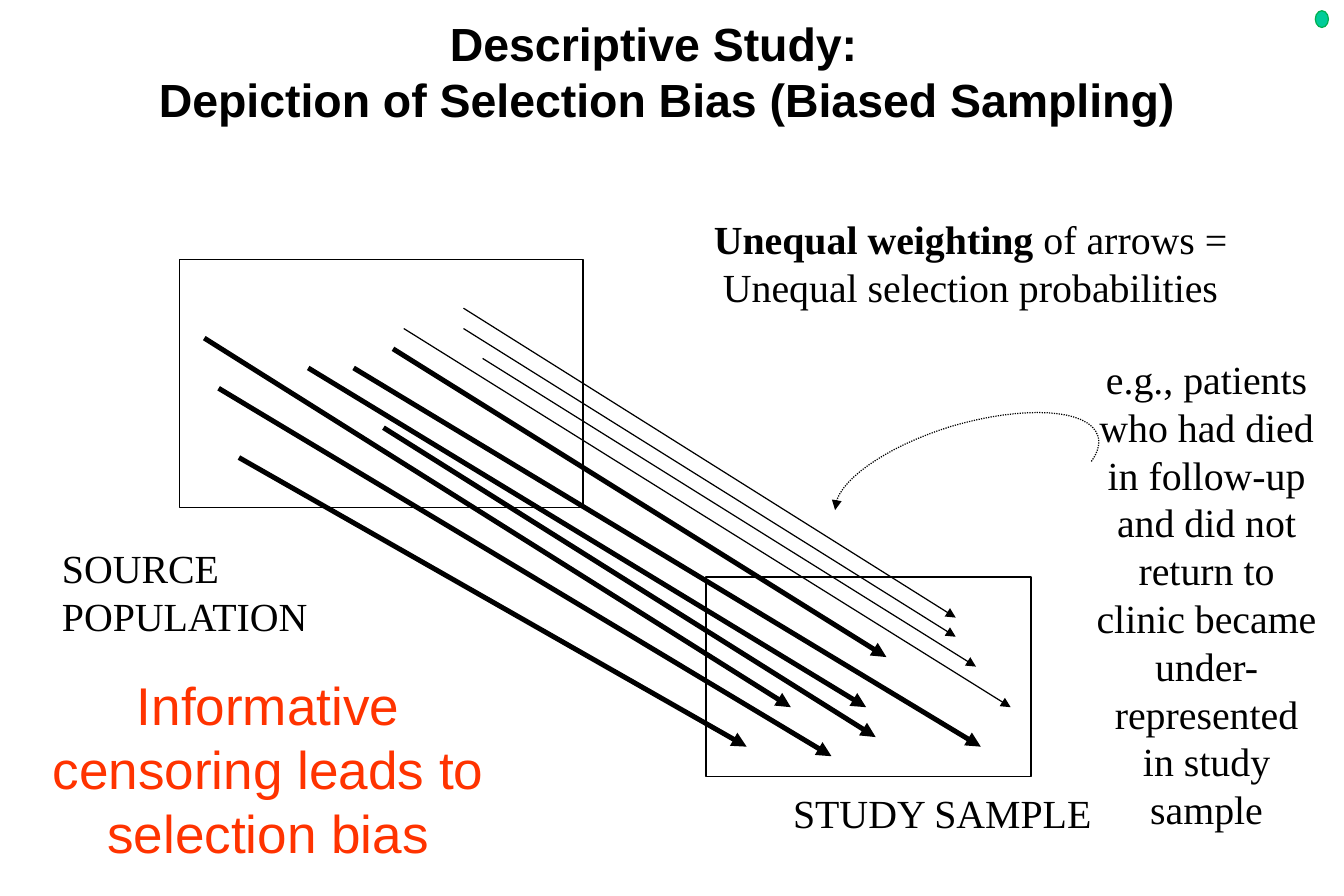
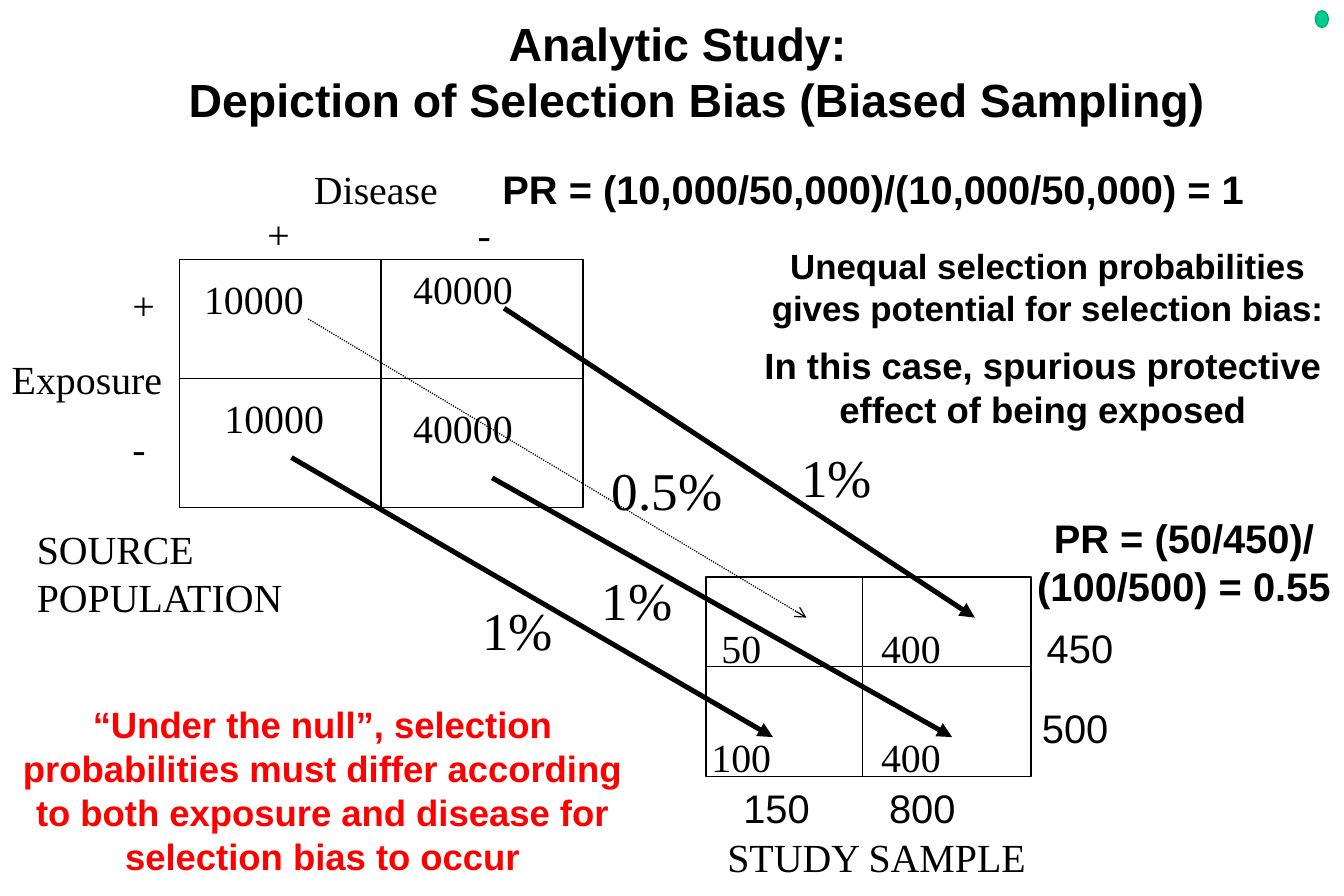
from dataclasses import dataclass

from lxml import etree
from pptx import Presentation
from pptx.dml.color import RGBColor
from pptx.enum.dml import MSO_LINE
from pptx.enum.shapes import MSO_CONNECTOR, MSO_SHAPE
from pptx.enum.text import MSO_ANCHOR, PP_ALIGN
from pptx.oxml.ns import qn
from pptx.util import Inches, Pt

BLACK = RGBColor(0x00, 0x00, 0x00)
ORANGE = RGBColor(0xFF, 0x33, 0x00)
RED = RGBColor(0xFF, 0x00, 0x00)
MINT = RGBColor(0x00, 0xCC, 0x99)
GREEN = RGBColor(0x00, 0xB0, 0x50)

SANS, SERIF = "Arial", "Times New Roman"
LEFT, CENTER = PP_ALIGN.LEFT, PP_ALIGN.CENTER
TOP = MSO_ANCHOR.TOP
DOTTED = MSO_LINE.ROUND_DOT
STRAIGHT = MSO_CONNECTOR.STRAIGHT
RECTANGLE, OVAL = MSO_SHAPE.RECTANGLE, MSO_SHAPE.OVAL

TITLE_ONLY = 5
LINE_PITCH = 1.2
THIN, THICK = 0.75, 3
CURVE_STEPS = 16

Point = tuple[float, float]


@dataclass(frozen=True)
class Label:
    text: str
    left: float
    top: float
    width: float
    height: float = 0.5
    size: float = 24
    font: str = SERIF
    color: RGBColor = BLACK
    bold: bool = False
    align: PP_ALIGN = CENTER
    bold_lead: str = ""


@dataclass(frozen=True)
class Arrow:
    start: Point
    end: Point
    weight: float = THICK
    dotted: bool = False
    head: str = "triangle"


@dataclass(frozen=True)
class Frame:
    left: float
    top: float
    width: float
    height: float


SOURCE = Frame(1.5, 2.17, 3.38, 2.08)
SAMPLE = Frame(5.91, 4.83, 2.72, 1.67)

SAMPLING_ARROWS = [
    Arrow((3.29, 2.92), (7.42, 5.5)),
    Arrow((2, 3.83), (6.25, 6.25)),
    Arrow((1.83, 3.25), (6.96, 6.33)),
    Arrow((2.58, 3.08), (7.25, 5.92)),
    Arrow((1.71, 2.83), (6.62, 5.92)),
    Arrow((3.21, 3.58), (7.33, 6.17)),
    Arrow((2.96, 3.08), (8.21, 6.25)),
    Arrow((3.38, 2.75), (8.46, 5.92), THIN),
    Arrow((4.04, 3), (8.17, 5.58), THIN),
    Arrow((3.88, 2.75), (8, 5.33), THIN),
    Arrow((3.88, 2.58), (8, 5.17), THIN),
]

DESCRIPTIVE_LABELS = [
    Label("SOURCE POPULATION", 0.42, 4.5, 2.5, 0.9, align=LEFT),
    Label("STUDY SAMPLE", 6.54, 6.55, 3, align=LEFT),
    Label("e.g., patients who had died in follow-up and did not return to "
          "clinic became under-represented in study sample",
          9.08, 2.92, 2.04, 4.14),
    Label("Informative censoring leads to selection bias",
          0.12, 5.58, 4.25, 1.72, 32, SANS, ORANGE),
    Label("of arrows = Unequal selection probabilities",
          5.71, 1.75, 4.83, 0.91, bold_lead="Unequal weighting "),
]

# Cubic segments: two control points and an end point each.
CALLOUT_START = (6.99, 4.27)
CALLOUT_CURVES = [
    ((6.98, 4.04), (7.41, 3.74), (7.96, 3.57)),
    ((8.57, 3.39), (9.12, 3.42), (9.19, 3.65)),
    ((9.21, 3.71), (9.19, 3.79), (9.13, 3.87)),
]

SELECTION_ARROWS = [
    Arrow((2.44, 3.83), (6.47, 6.17)),
    Arrow((4.22, 2.58), (8.16, 5.17)),
    Arrow((4.12, 4), (7.97, 6.17)),
    Arrow((2.58, 2.67), (6.75, 5.17), THIN, dotted=True, head="arrow"),
]

CELL_COUNTS = [
    Label(text, left, top, 1.17) for text, left, top in [
        ("10000", 1.54, 2.25), ("40000", 3.29, 2.17),
        ("10000", 1.71, 3.25), ("40000", 3.29, 3.33),
        ("50", 5.62, 5.17), ("400", 7.04, 5.17),
        ("100", 5.62, 6.08), ("400", 7.04, 6.08),
    ]
]
MARGIN_TOTALS = [
    Label(text, left, top, 1, font=SANS) for text, left, top in [
        ("450", 8.54, 5.17), ("500", 8.5, 5.84),
        ("150", 6, 6.51), ("800", 7.22, 6.51),
    ]
]
SELECTION_PROBABILITIES = [
    Label(text, left, top, 1.25, 0.63, 32) for text, left, top in [
        ("1%", 3.71, 4.95), ("1%", 4.71, 4.7),
        ("0.5%", 4.96, 3.78), ("1%", 6.38, 3.67),
    ]
]
AXIS_LABELS = [
    Label(text, left, top, 1.46, align=LEFT) for text, left, top in [
        ("Disease", 2.53, 1.33), ("+", 2.14, 1.71), ("-", 3.9, 1.71),
        ("Exposure", 0, 2.92), ("+", 1.01, 2.3), ("-", 1.01, 3.5),
    ]
]
ANALYTIC_LABELS = [
    *AXIS_LABELS, *CELL_COUNTS, *SELECTION_PROBABILITIES, *MARGIN_TOTALS,
    Label("SOURCE\nPOPULATION", 0.21, 4.34, 2.5, 0.91, align=LEFT),
    Label("STUDY SAMPLE", 5.99, 6.92, 3, align=LEFT),
    Label("PR = (10,000/50,000)/(10,000/50,000) = 1",
          3.79, 1.33, 7.04, font=SANS, bold=True),
    Label("Unequal selection probabilities gives potential for selection bias:",
          6.29, 2, 4.96, 0.94, 21, SANS, bold=True),
    Label("In this case, spurious protective effect of being exposed",
          6.25, 2.82, 4.96, 0.85, 22, SANS, bold=True),
    Label("PR = (50/450)/ (100/500) = 0.55",
          8.57, 4.25, 2.68, 0.91, font=SANS, bold=True),
    Label("“Under the null”, selection probabilities must differ according "
          "to both exposure and disease for selection bias to occur",
          0.03, 5.83, 5.34, 1.6, 22, SANS, RED, True),
]


def format_paragraph(para, size: float, font: str, color: RGBColor,
                     align: PP_ALIGN, bold: bool) -> None:
    para.alignment = align
    para.line_spacing = Pt(round(size * LINE_PITCH, 1))
    para.font.size = Pt(size)
    para.font.name = font
    para.font.bold = bold
    para.font.color.rgb = color


def add_label(page, label: Label) -> None:
    box = page.shapes.add_textbox(Inches(label.left), Inches(label.top),
                                  Inches(label.width), Inches(label.height))
    frame = box.text_frame
    frame.word_wrap = True
    frame.text = label.text
    if label.bold_lead:
        para = frame.paragraphs[0]
        para.clear()
        lead = para.add_run()
        lead.text = label.bold_lead
        lead.font.bold = True
        para.add_run().text = label.text
    for para in frame.paragraphs:
        format_paragraph(para, label.size, label.font, label.color,
                         label.align, label.bold)


def add_outline(page, preset: MSO_SHAPE, frame: Frame, color: RGBColor):
    shape = page.shapes.add_shape(preset, Inches(frame.left), Inches(frame.top),
                                  Inches(frame.width), Inches(frame.height))
    shape.shadow.inherit = False
    shape.fill.background()
    shape.line.color.rgb = color
    shape.line.width = Pt(THIN)
    return shape


def add_line(page, start: Point, end: Point, weight: float = THIN):
    line = page.shapes.add_connector(
        STRAIGHT, *(Inches(value) for value in (*start, *end)))
    line.line.color.rgb = BLACK
    line.line.width = Pt(weight)
    etree.SubElement(line._element.spPr, qn("a:effectLst"))
    return line


def add_arrowhead(shape, end_tag: str, kind: str) -> None:
    etree.SubElement(shape.line._get_or_add_ln(), qn(end_tag), type=kind)


def add_arrow(page, arrow: Arrow) -> None:
    line = add_line(page, arrow.start, arrow.end, arrow.weight)
    if arrow.dotted:
        line.line.dash_style = DOTTED
    add_arrowhead(line, "a:tailEnd", arrow.head)


def add_cross(page, frame: Frame, split_x: float, split_y: float) -> None:
    """Divide a frame into the four cells of a two-by-two table."""
    add_line(page, (split_x, frame.top), (split_x, frame.top + frame.height))
    add_line(page, (frame.left, split_y), (frame.left + frame.width, split_y))


def cubic_point(corners: tuple[Point, ...], t: float) -> Point:
    weights = ((1 - t) ** 3, 3 * t * (1 - t) ** 2, 3 * t * t * (1 - t), t ** 3)
    x, y = (sum(weight * corner[axis] for weight, corner in zip(weights, corners))
            for axis in (0, 1))
    return x, y


def add_callout_curve(page) -> None:
    points, start = [], CALLOUT_START
    for curve in CALLOUT_CURVES:
        points += [cubic_point((start, *curve), step / CURVE_STEPS)
                   for step in range(1, CURVE_STEPS + 1)]
        start = curve[-1]
    builder = page.shapes.build_freeform(*(Inches(value) for value in CALLOUT_START))
    builder.add_line_segments([(Inches(x), Inches(y)) for x, y in points], close=False)
    curve_shape = builder.convert_to_shape()
    curve_shape.shadow.inherit = False
    curve_shape.fill.background()
    curve_shape.line.color.rgb = BLACK
    curve_shape.line.width = Pt(THIN)
    curve_shape.line.dash_style = DOTTED
    add_arrowhead(curve_shape, "a:headEnd", "triangle")


def add_page(deck, study: str, center: float, indent: float):
    """Add a slide with its title, corner dot and the two population frames.

    The first title line is centred on `center`; the second is indented.
    """
    page = deck.slides.add_slide(deck.slide_layouts[TITLE_ONLY])
    width = 9.2
    title = page.shapes.title
    title.left, title.top = Inches(center - width / 2), Inches(0.08)
    title.width, title.height = Inches(width), Inches(1.03)
    frame = title.text_frame
    frame.vertical_anchor = TOP
    frame.text = f"{study}:\nDepiction of Selection Bias (Biased Sampling)"
    for para in frame.paragraphs:
        format_paragraph(para, 28, SANS, BLACK, CENTER, True)
    frame.paragraphs[1]._p.get_or_add_pPr().set("marL", str(Inches(indent)))

    dot = add_outline(page, OVAL, Frame(11.01, 0.09, 0.11, 0.14), GREEN)
    dot.fill.solid()
    dot.fill.fore_color.rgb = MINT
    for population in (SOURCE, SAMPLE):
        add_outline(page, RECTANGLE, population, BLACK)
    return page


def add_content(page, arrows: list[Arrow], labels: list[Label]) -> None:
    for arrow in arrows:
        add_arrow(page, arrow)
    for label in labels:
        add_label(page, label)


def main() -> None:
    deck = Presentation()
    deck.slide_width, deck.slide_height = Inches(11.25), Inches(7.5)

    descriptive = add_page(deck, "Descriptive Study", 5.47, 0.22)
    add_content(descriptive, SAMPLING_ARROWS, DESCRIPTIVE_LABELS)
    add_callout_curve(descriptive)

    analytic = add_page(deck, "Analytic Study", 5.67, 0.32)
    add_cross(analytic, SOURCE, 3.19, 3.17)
    add_cross(analytic, SAMPLE, 7.22, 5.58)
    add_content(analytic, SELECTION_ARROWS, ANALYTIC_LABELS)

    deck.save("out.pptx")


if __name__ == "__main__":
    main()
